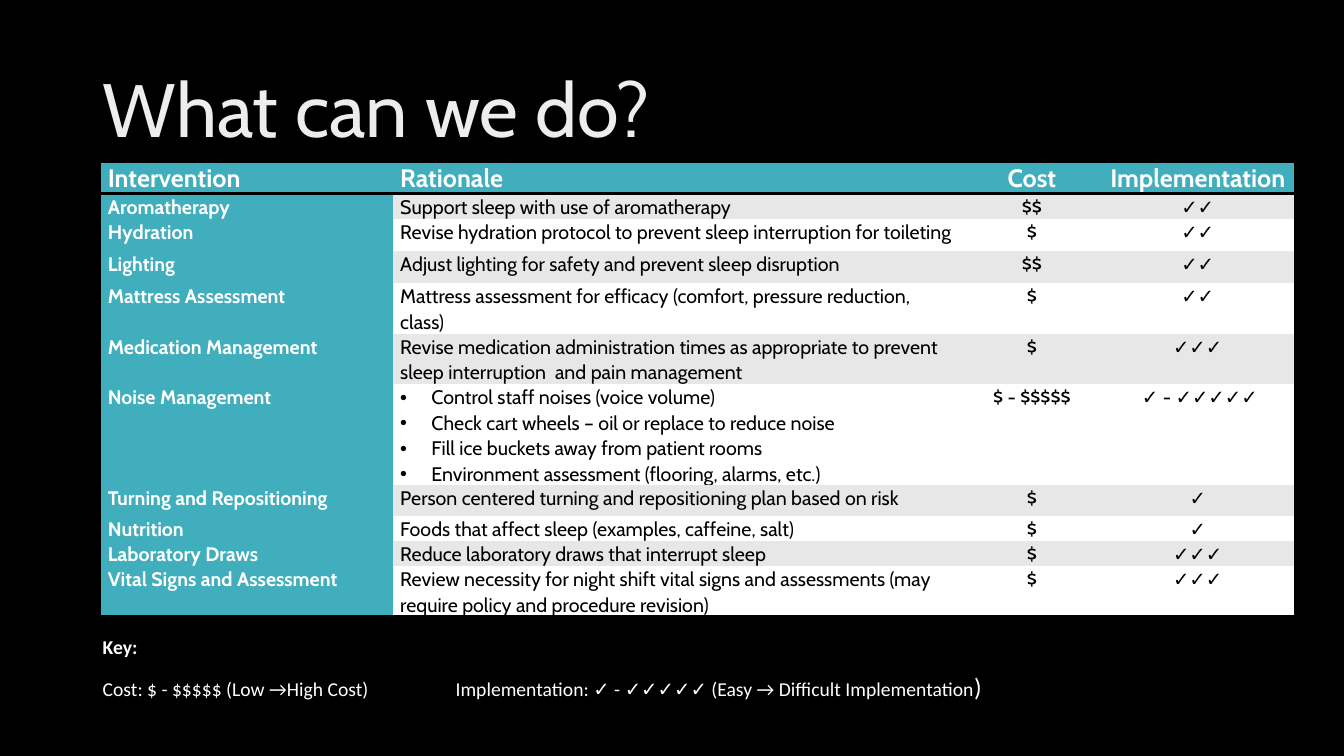
from dataclasses import dataclass

from lxml import etree
from pptx import Presentation
from pptx.dml.color import RGBColor
from pptx.enum import text
from pptx.oxml import ns
from pptx.util import Inches, Pt


@dataclass(frozen=True)
class Theme:
    black: str = "000000"
    white: str = "FFFFFF"
    title: str = "EDEDED"
    teal: str = "41AEBD"
    band: str = "E7E7E7"
    heading_font: str = "Cabin"
    key_font: str = "Calibri"
    title_size: int = 54
    large: int = 18
    body: int = 14
    spacing: float = 1.07


THEME = Theme()
NO_GRID_STYLE = "{2D5ABB26-0587-4C30-8999-92F81FD0307C}"
COLUMN_WIDTHS = [2.9, 5.64, 1.39, 1.9]
HEADER = ("Intervention", "Rationale", "Cost", "Implementation")
HEADER_HEIGHT = 0.29
# Row height, intervention, rationale (a list is bulleted), cost, implementation
INTERVENTIONS = [
    (0.2, "Aromatherapy", "Support sleep with use of aromatherapy", "$$", "✓✓"),
    (0.32, "Hydration",
     "Revise hydration protocol to prevent sleep interruption for toileting", "$", "✓✓"),
    (0.32, "Lighting", "Adjust lighting for safety and prevent sleep disruption", "$$", "✓✓"),
    (0.34, "Mattress Assessment",
     "Mattress assessment for efficacy (comfort, pressure reduction, class)", "$", "✓✓"),
    (0.34, "Medication Management",
     "Revise medication administration times as appropriate to prevent "
     "sleep interruption  and pain management", "$", "✓✓✓"),
    (0.71, "Noise Management",
     ["Control staff noises (voice volume)",
      "Check cart wheels – oil or replace to reduce noise",
      "Fill ice buckets away from patient rooms",
      "Environment assessment (flooring, alarms, etc.)"],
     "$ - $$$$$", " ✓ - ✓✓✓✓✓"),
    (0.31, "Turning and Repositioning",
     "Person centered turning and repositioning plan based on risk", "$", "✓"),
    (0.17, "Nutrition", "Foods that affect sleep (examples, caffeine, salt)", "$", "✓"),
    (0.14, "Laboratory Draws", "Reduce laboratory draws that interrupt sleep", "$", "✓✓✓"),
    (0.21, "Vital Signs and Assessment",
     "Review necessity for night shift vital signs and assessments "
     "(may require policy and procedure revision)", "$", "✓✓✓"),
]


def add_span(para, words, *, font=THEME.heading_font, size=THEME.body,
             color=THEME.white, bold=False):
    span = para.add_run()
    span.text = words
    span.font.name = font
    span.font.size = Pt(size)
    span.font.bold = bold
    span.font.color.rgb = RGBColor.from_string(color)


def add_child(parent, tag, **attributes):
    child = etree.SubElement(parent, ns.qn(tag))
    for name, value in attributes.items():
        child.set(name, str(value))
    return child


def add_box(page, left, top, width, height):
    box = page.shapes.add_textbox(Inches(left), Inches(top), Inches(width), Inches(height))
    box.text_frame.word_wrap = True
    return box.text_frame


def add_bullet(para):
    properties = para._p.get_or_add_pPr()
    properties.set("marL", str(Inches(0.31)))
    properties.set("indent", str(Inches(-0.31)))
    add_child(properties, "a:buFont", typeface="Arial")
    add_child(properties, "a:buChar", char="•")


def add_border(cell, side):
    line = add_child(cell._tc.get_or_add_tcPr(), side, w=Pt(2))
    add_child(add_child(line, "a:solidFill"), "a:srgbClr", val=THEME.black)


def fill_cell(cell, content, *, fill, borders=(), centred=False, **style):
    """Write a string, or a list as bullets, into a table cell."""
    cell.margin_left = cell.margin_right = Inches(0.07)
    cell.margin_top = cell.margin_bottom = 0
    for side in borders:
        add_border(cell, side)
    cell.fill.solid()
    cell.fill.fore_color.rgb = RGBColor.from_string(fill)
    bulleted = isinstance(content, list)
    frame = cell.text_frame
    for index, words in enumerate(content if bulleted else [content]):
        para = frame.add_paragraph() if index else frame.paragraphs[0]
        para.line_spacing = THEME.spacing
        if centred:
            para.alignment = text.PP_ALIGN.CENTER
        if bulleted:
            add_bullet(para)
        add_span(para, words, **style)


def add_title(page, words):
    frame = add_box(page, 0.92, 0.4, 11.5, 1.45)
    frame.vertical_anchor = text.MSO_ANCHOR.MIDDLE
    para = frame.paragraphs[0]
    para.line_spacing = 0.9
    add_span(para, words, size=THEME.title_size, color=THEME.title)


def add_interventions(page):
    heights = [HEADER_HEIGHT] + [row[0] for row in INTERVENTIONS]
    graphic = page.shapes.add_table(
        len(heights), len(COLUMN_WIDTHS), Inches(1), Inches(1.6),
        Inches(sum(COLUMN_WIDTHS)), Inches(sum(heights)))
    table = graphic.table
    table.horz_banding = False
    for style_id in graphic.element.iter(ns.qn("a:tableStyleId")):
        style_id.text = NO_GRID_STYLE
    for column, width in zip(table.columns, COLUMN_WIDTHS):
        column.width = Inches(width)
    for row, height in zip(table.rows, heights):
        row.height = Inches(height)

    for column, words in enumerate(HEADER):
        fill_cell(table.cell(0, column), words, fill=THEME.teal, borders=("a:lnT", "a:lnB"),
                  centred=column > 1, size=THEME.large, bold=True)
    for row, (_, *contents) in enumerate(INTERVENTIONS, start=1):
        band = THEME.band if row % 2 else THEME.white
        borders = ("a:lnB",) if row == len(INTERVENTIONS) else ()
        for column, content in enumerate(contents):
            first = column == 0
            fill_cell(table.cell(row, column), content, borders=borders,
                      fill=THEME.teal if first else band, centred=column > 1,
                      color=THEME.white if first else THEME.black, bold=first)


def add_key(page):
    frame = add_box(page, 0.92, 6.23, 11.91, 0.77)
    frame.auto_size = text.MSO_AUTO_SIZE.SHAPE_TO_FIT_TEXT
    heading, legend = frame.paragraphs[0], frame.add_paragraph()
    for para in (heading, legend):
        para.line_spacing = THEME.spacing
        para.space_after = Pt(8)
    tabs = add_child(legend._p.get_or_add_pPr(), "a:tabLst")
    add_child(tabs, "a:tab", pos=Inches(3.5), algn="l")
    add_span(heading, "Key:", font=THEME.key_font, bold=True)
    add_span(legend, "Cost: $ - $$$$$ (Low →High Cost)\t"
             "Implementation: ✓ - ✓✓✓✓✓ (Easy → Difficult Implementation", font=THEME.key_font)
    add_span(legend, ")", font=THEME.key_font, size=THEME.large)


def main():
    deck = Presentation()
    deck.slide_width, deck.slide_height = Inches(13.33), Inches(7.5)
    page = deck.slides.add_slide(deck.slide_layouts[6])
    page.background.fill.solid()
    page.background.fill.fore_color.rgb = RGBColor.from_string(THEME.black)
    add_title(page, "What can we do?")
    add_interventions(page)
    add_key(page)
    deck.save("out.pptx")


if __name__ == "__main__":
    main()
